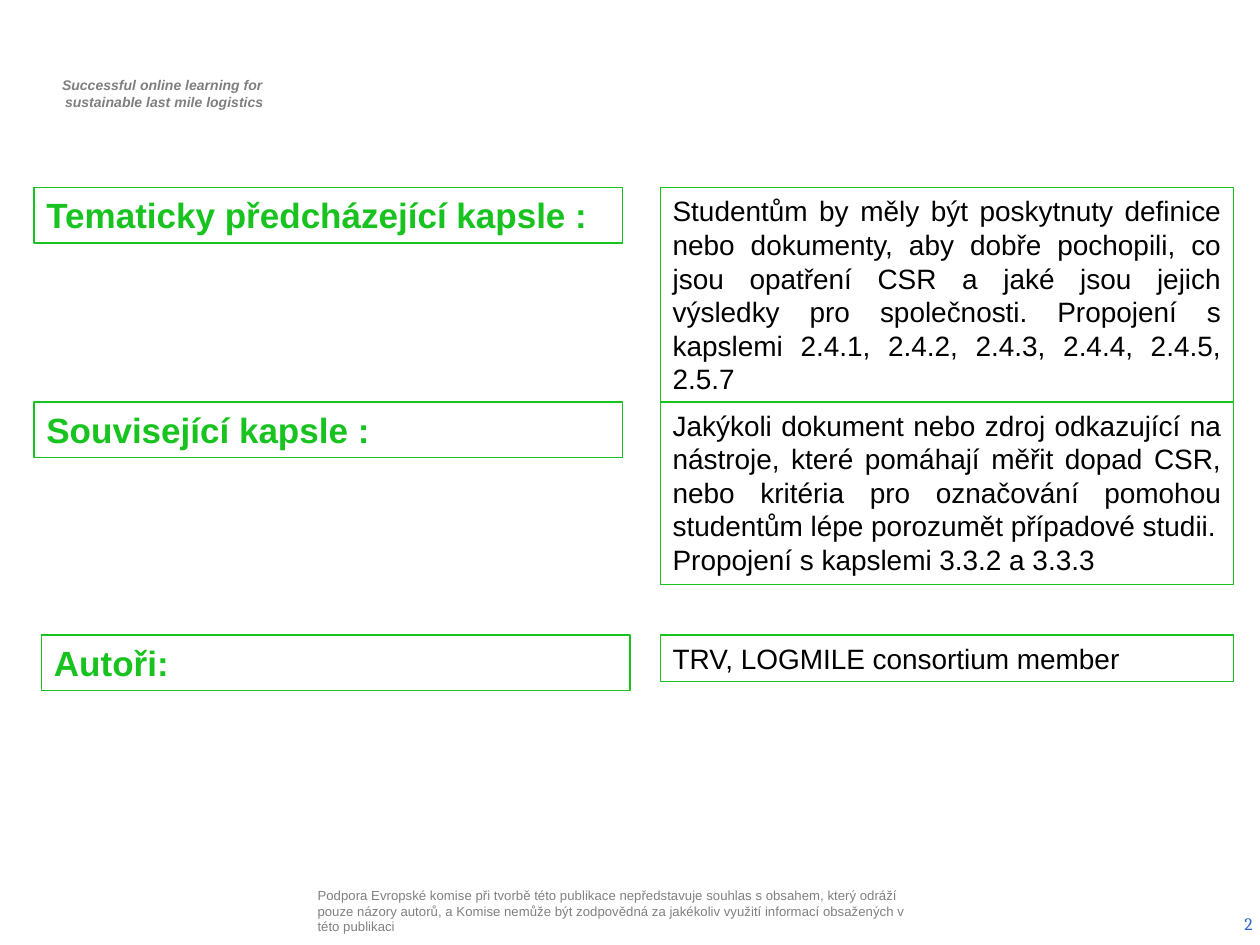
from pptx import Presentation
from pptx.dml.color import RGBColor
from pptx.enum.shapes import MSO_SHAPE
from pptx.enum.text import MSO_ANCHOR, MSO_AUTO_SIZE, PP_ALIGN
from pptx.util import Inches, Pt

COLORS = {
    "green": "18C320",
    "white": "FFFFFF",
    "black": "000000",
    "tagline": "7F7F7F",
    "disclaimer": "808080",
    "number": "3366CC",
}


def color(name):
    return RGBColor.from_string(COLORS[name])


def write_text(shape, lines, size, color_name, align=PP_ALIGN.LEFT, anchor=MSO_ANCHOR.TOP,
               font="Arial", bold=False, italic=False, insets=(0.1, 0.05)):
    frame = shape.text_frame
    frame.word_wrap = True
    frame.auto_size = MSO_AUTO_SIZE.NONE
    frame.vertical_anchor = anchor
    frame.margin_left = frame.margin_right = Inches(insets[0])
    frame.margin_top = frame.margin_bottom = Inches(insets[1])
    for index, line in enumerate(lines):
        paragraph = frame.add_paragraph() if index else frame.paragraphs[0]
        paragraph.alignment = align
        run = paragraph.add_run()
        run.text = line
        run.font.name = font
        run.font.size = Pt(size)
        run.font.bold = bold
        run.font.italic = italic
        run.font.color.rgb = color(color_name)


presentation = Presentation()
presentation.slide_width = Inches(10)
presentation.slide_height = Inches(7.5)
slide = presentation.slides.add_slide(presentation.slide_layouts[6])

tagline = slide.shapes.add_textbox(Inches(0.29), Inches(0.56), Inches(2.03), Inches(0.37))
write_text(tagline, ["Successful online learning for ", "sustainable last mile logistics"],
           8, "tagline", PP_ALIGN.CENTER, bold=True, italic=True)

disclaimer = slide.shapes.add_textbox(Inches(2.48), Inches(6.98), Inches(4.81), Inches(0.5))
write_text(disclaimer, [
    "Podpora Evropské komise při tvorbě této publikace nepředstavuje souhlas s obsahem, "
    "který odráží pouze názory autorů, a Komise nemůže být zodpovědná za jakékoliv využití "
    "informací obsažených v této publikaci"
], 7.5, "disclaimer", anchor=MSO_ANCHOR.MIDDLE, insets=(0.04, 0.04))

slide_number = slide.shapes.add_textbox(Inches(7.71), Inches(7.13), Inches(2.33), Inches(0.4))
write_text(slide_number, ["2"], 10, "number", PP_ALIGN.RIGHT, MSO_ANCHOR.MIDDLE, font="Cambria")

sections = [
    (1.49, 0.27, "Tematicky předcházející kapsle :", 1.72, PP_ALIGN.JUSTIFY, [
        "Studentům by měly být poskytnuty definice nebo dokumenty, aby dobře pochopili, co jsou "
        "opatření CSR a jaké jsou jejich výsledky pro společnosti. Propojení s kapslemi 2.4.1, "
        "2.4.2, 2.4.3, 2.4.4, 2.4.5, 2.5.7",
    ]),
    (3.19, 0.27, "Související kapsle :", 1.45, PP_ALIGN.JUSTIFY, [
        "Jakýkoli dokument nebo zdroj odkazující na nástroje, které pomáhají měřit dopad CSR, "
        "nebo kritéria pro označování pomohou studentům lépe porozumět případové studii.",
        "Propojení s kapslemi 3.3.2 a 3.3.3",
    ]),
    (5.04, 0.33, "Autoři:", 0.37, PP_ALIGN.LEFT, ["TRV, LOGMILE consortium member"]),
]

for top, label_left, label, detail_height, detail_align, details in sections:
    boxes = [
        (label_left, 4.67, 0.44, [label], 20, "green", PP_ALIGN.LEFT, True),
        (5.24, 4.55, detail_height, details, 16, "black", detail_align, False),
    ]
    for left, width, height, lines, size, text_color, align, bold in boxes:
        box = slide.shapes.add_shape(MSO_SHAPE.RECTANGLE, Inches(left), Inches(top),
                                     Inches(width), Inches(height))
        box.shadow.inherit = False
        box.fill.solid()
        box.fill.fore_color.rgb = color("white")
        box.line.color.rgb = color("green")
        box.line.width = Pt(0.75)
        write_text(box, lines, size, text_color, align, bold=bold)

presentation.save("out.pptx")
